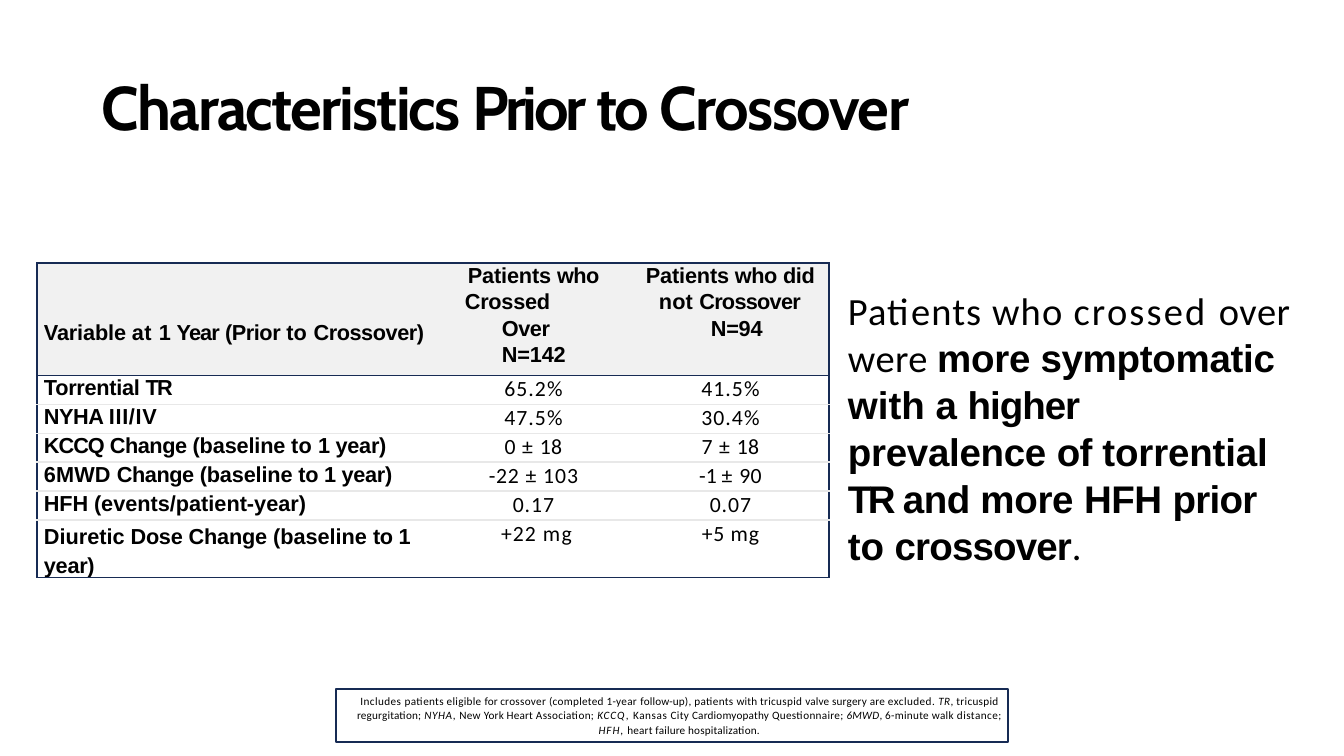
from dataclasses import dataclass

from lxml import etree
from pptx import Presentation
from pptx.dml.color import RGBColor
from pptx.enum.shapes import MSO_SHAPE
from pptx.enum.text import MSO_ANCHOR, PP_ALIGN
from pptx.oxml.ns import qn
from pptx.util import Emu, Pt

RECTANGLE = MSO_SHAPE.RECTANGLE
TOP = MSO_ANCHOR.TOP
LEFT, CENTER = PP_ALIGN.LEFT, PP_ALIGN.CENTER

BLACK = RGBColor(0x00, 0x00, 0x00)
WHITE = RGBColor(0xFF, 0xFF, 0xFF)
NAVY = RGBColor(0x17, 0x2B, 0x54)
HEADER_GREY = RGBColor(0xF1, 0xF1, 0xF1)
RULE_GREY = RGBColor(0xE8, 0xE8, 0xE8)

SLIDE_WIDTH, SLIDE_HEIGHT = 1344, 756
EMU_PER_PX = 12192000 / SLIDE_WIDTH


@dataclass(frozen=True)
class Style:
    font: str
    size: float
    bold: bool = False
    italic: bool = False


TITLE = Style("Cabin", 44, bold=True)
BODY = Style("Calibri", 27.5)
BODY_BOLD = Style("Arial", 27.5, bold=True)
LABEL = Style("Arial", 15.5, bold=True)
VALUE = Style("Calibri", 15.5)
NOTE = Style("Calibri", 8)
ABBREVIATION = Style("Calibri", 8, italic=True)

TITLE_SPANS = [("Characteristics ", -1.4), ("Prior ", -2.5), ("to ", -2.4), ("Crossover", -1.1)]

FINDING_LINES = [
    [(BODY, [("Patients who ", 0.8), ("crossed ", 1.6), ("over", 0.4)])],
    [(BODY, [("were ", 0.3)]), (BODY_BOLD, [("more symptomatic", -0.2)])],
    [(BODY_BOLD, [("with a ", 0), ("higher", -0.7)])],
    [(BODY_BOLD, [("prevalence ", -0.2), ("of ", -0.5), ("torrential", -0.1)])],
    [(BODY_BOLD, [("TR ", -2.5), ("and ", -0.4), ("more ", -0.2), ("HFH ", -0.3), ("prior", -0.5)])],
    [(BODY_BOLD, [("to ", -0.1), ("crossover", -0.6)]), (BODY, [(".", -0.6)])],
]

FOOTNOTE = [
    (NOTE, [("Includes ", 0.3), ("patients eligible ", 0.2), ("for ", 0),
            ("crossover (completed 1-year ", 0.2), ("follow-up), ", 0.1), ("patients ", 0.2),
            ("with ", 0.1), ("tricuspid ", 0.2), ("valve surgery are ", 0.1), ("excluded. ", 0.3)]),
    (ABBREVIATION, [("TR", 0.2)]),
    (NOTE, [(", tricuspid ", 0.2), ("regurgitation; ", 0.1)]),
    (ABBREVIATION, [("NYHA", 0.4)]),
    (NOTE, [(", ", 0.4), ("New ", 0.2), ("York Heart ", 0.1), ("Association; ", 0.2)]),
    (ABBREVIATION, [("KCCQ", 0.7)]),
    (NOTE, [(", ", 0.7), ("Kansas ", 0.4), ("City ", 0.2), ("Cardiomyopathy ", 0.1),
            ("Questionnaire; ", 0.2)]),
    (ABBREVIATION, [("6MWD", 0.1)]),
    (NOTE, [(", ", 0.1), ("6-minute walk ", 0.2), ("distance; ", 0.3)]),
    (ABBREVIATION, [("HFH", 0.6)]),
    (NOTE, [(", ", 0.6), ("heart failure hospitalization.", 0.1)]),
]

VARIABLE_HEADER = [("Variable ", -0.1), ("at ", 0.4), ("1 ", -0.2), ("Year ", -0.6),
                   ("(Prior ", -0.3), ("to ", 0.2), ("Crossover)", -0.3)]

GROUP_HEADERS = [
    (26, [("Patients ", -0.1), ("who", -0.3)],
     60, -37, [[("Crossed", -0.2)], [("Over", -0.3)], [("N=142", -0.1)]]),
    (22, [("Patients ", -0.1), ("who ", -0.3), ("did", -0.2)],
     87, -52, [[("not ", 0.1), ("Crossover", -0.5)], [("N=94", -0.2)]]),
]

ROWS = [
    ([("Torrential ", -0.2), ("TR", -1.2)], [("65.2%", 0.8)], [("41.5%", 0.8)]),
    ([("NYHA ", -0.3), ("III/IV", 0.5)], [("47.5%", 0.8)], [("30.4%", 0.8)]),
    ([("KCCQ ", -0.7), ("Change ", -0.3), ("(baseline ", -0.1), ("to ", 0.1), ("1 year)", -0.2)],
     [("0 ", 0.6), ("± ", 0.7), ("18", 0.3)], [("7 ", 0.6), ("± ", 0.7), ("18", 0.3)]),
    ([("6MWD ", 0.1), ("Change ", -0.3), ("(baseline ", -0.1), ("to 1 year)", -0.2)],
     [("-22 ", 0.6), ("± 103", 0.7)], [("-1 ", 0), ("± ", 0.7), ("90", 0.3)]),
    ([("HFH ", -0.1), ("(events/patient-year)", 0)], [("0.17", 0.7)], [("0.07", 0.7)]),
    ([("Diuretic ", 0), ("Dose ", -0.2), ("Change ", -0.1), ("(baseline ", 0), ("to 1 year)", -0.2)],
     [("+22 ", 0.7), ("mg", 1.1)], [("+5 ", 0.5), ("mg", 0.7)]),
]

COLUMN_WIDTHS = [405, 182, 205]
ROW_HEIGHTS = [112] + [29] * 5 + [57]


def px(length):
    return Emu(round(length * EMU_PER_PX))


def add_spans(para, style, spans):
    for text, spacing in spans:
        span = para.add_run()
        span.text = text
        font = span.font
        font.name, font.size = style.font, Pt(style.size)
        font.bold, font.italic = style.bold, style.italic
        font.color.rgb = BLACK
        span._r.get_or_add_rPr().set("spc", str(round(spacing * 100)))


def add_lines(para, lines):
    for number, line in enumerate(lines):
        if number:
            para.add_line_break()
        for style, spans in line:
            add_spans(para, style, spans)


def format_para(para, align=LEFT, margin=0, indent=0, line_spacing=None):
    para.alignment = align
    properties = para._p.get_or_add_pPr()
    properties.set("marL", str(px(margin)))
    properties.set("indent", str(px(indent)))
    para.line_spacing = line_spacing


def set_frame(frame, top):
    frame.word_wrap = True
    frame.vertical_anchor = TOP
    frame.margin_left = frame.margin_right = frame.margin_bottom = 0
    frame.margin_top = px(top)


def add_text(page, left, top, width, height, lines, inset, line_spacing=None):
    box = page.shapes.add_textbox(px(left), px(top), px(width), px(height))
    set_frame(box.text_frame, inset)
    para = box.text_frame.paragraphs[0]
    format_para(para, margin=1, line_spacing=line_spacing)
    add_lines(para, lines)


def add_footnote(page):
    box = page.shapes.add_shape(RECTANGLE, px(336), px(689), px(672), px(53))
    box.shadow.inherit = False
    box.fill.solid()
    box.fill.fore_color.rgb = WHITE
    box.line.color.rgb = NAVY
    box.line.width = Pt(1.5)
    set_frame(box.text_frame, 4)
    para = box.text_frame.paragraphs[0]
    format_para(para, CENTER, margin=15, line_spacing=1.09)
    add_lines(para, [FOOTNOTE])


def set_borders(cell, row, column):
    last_row, last_column = len(ROW_HEIGHTS) - 1, len(COLUMN_WIDTHS) - 1
    borders = [
        ("a:lnL", NAVY if column == 0 else None),
        ("a:lnR", NAVY if column == last_column else None),
        ("a:lnT", NAVY if row < 2 else RULE_GREY),
        ("a:lnB", NAVY if row in (0, last_row) else RULE_GREY),
    ]
    properties = cell._tc.get_or_add_tcPr()
    for position, (tag, color) in enumerate(borders):
        line = etree.Element(qn(tag), w=str(Pt(1)))
        if color is None:
            etree.SubElement(line, qn("a:noFill"))
        else:
            fill = etree.SubElement(line, qn("a:solidFill"))
            etree.SubElement(fill, qn("a:srgbClr"), val=str(color))
        properties.insert(position, line)


def fill_header(table):
    cell = table.cell(0, 0)
    cell.margin_top = px(57)
    para = cell.text_frame.paragraphs[0]
    format_para(para, margin=7, line_spacing=Pt(18.2))
    add_spans(para, LABEL, VARIABLE_HEADER)
    for column, (margin, first, hanging, indent, rest) in enumerate(GROUP_HEADERS, 1):
        frame = table.cell(0, column).text_frame
        para = frame.paragraphs[0]
        format_para(para, margin=margin)
        add_spans(para, LABEL, first)
        para = frame.add_paragraph()
        format_para(para, margin=hanging, indent=indent, line_spacing=1.09)
        add_lines(para, [[(LABEL, spans)] for spans in rest])


def fill_rows(table):
    formats = [(LABEL, LEFT, 7), (VALUE, CENTER, 1), (VALUE, CENTER, 8)]
    for row, contents in enumerate(ROWS, 1):
        for column, spans in enumerate(contents):
            style, align, margin = formats[column]
            para = table.cell(row, column).text_frame.paragraphs[0]
            tall_label = row == len(ROWS) and column == 0
            if row == len(ROWS) and column == 1:
                margin = 7
            format_para(para, align, margin, line_spacing=Pt(20.3) if tall_label else None)
            add_spans(para, style, spans)


def add_characteristics_table(page):
    table = page.shapes.add_table(len(ROW_HEIGHTS), len(COLUMN_WIDTHS), px(37), px(263),
                                  px(sum(COLUMN_WIDTHS)), px(sum(ROW_HEIGHTS))).table
    table.first_row = table.horz_banding = False
    for column, width in enumerate(COLUMN_WIDTHS):
        table.columns[column].width = px(width)
    for row, height in enumerate(ROW_HEIGHTS):
        table.rows[row].height = px(height)
        for column in range(len(COLUMN_WIDTHS)):
            cell = table.cell(row, column)
            cell.margin_left = cell.margin_right = cell.margin_bottom = 0
            cell.margin_top = px(1)
            cell.vertical_anchor = TOP
            cell.fill.solid()
            cell.fill.fore_color.rgb = WHITE if row else HEADER_GREY
            set_borders(cell, row, column)
    fill_header(table)
    fill_rows(table)


def main():
    deck = Presentation()
    deck.slide_width, deck.slide_height = px(SLIDE_WIDTH), px(SLIDE_HEIGHT)
    page = deck.slides.add_slide(deck.slide_layouts[6])
    add_text(page, 101, 67, 887, 78, [[(TITLE, TITLE_SPANS)]], 2)
    add_text(page, 847, 285, 460, 239, FINDING_LINES, 1, 1.02)
    add_characteristics_table(page)
    add_footnote(page)
    deck.save("out.pptx")


if __name__ == "__main__":
    main()
